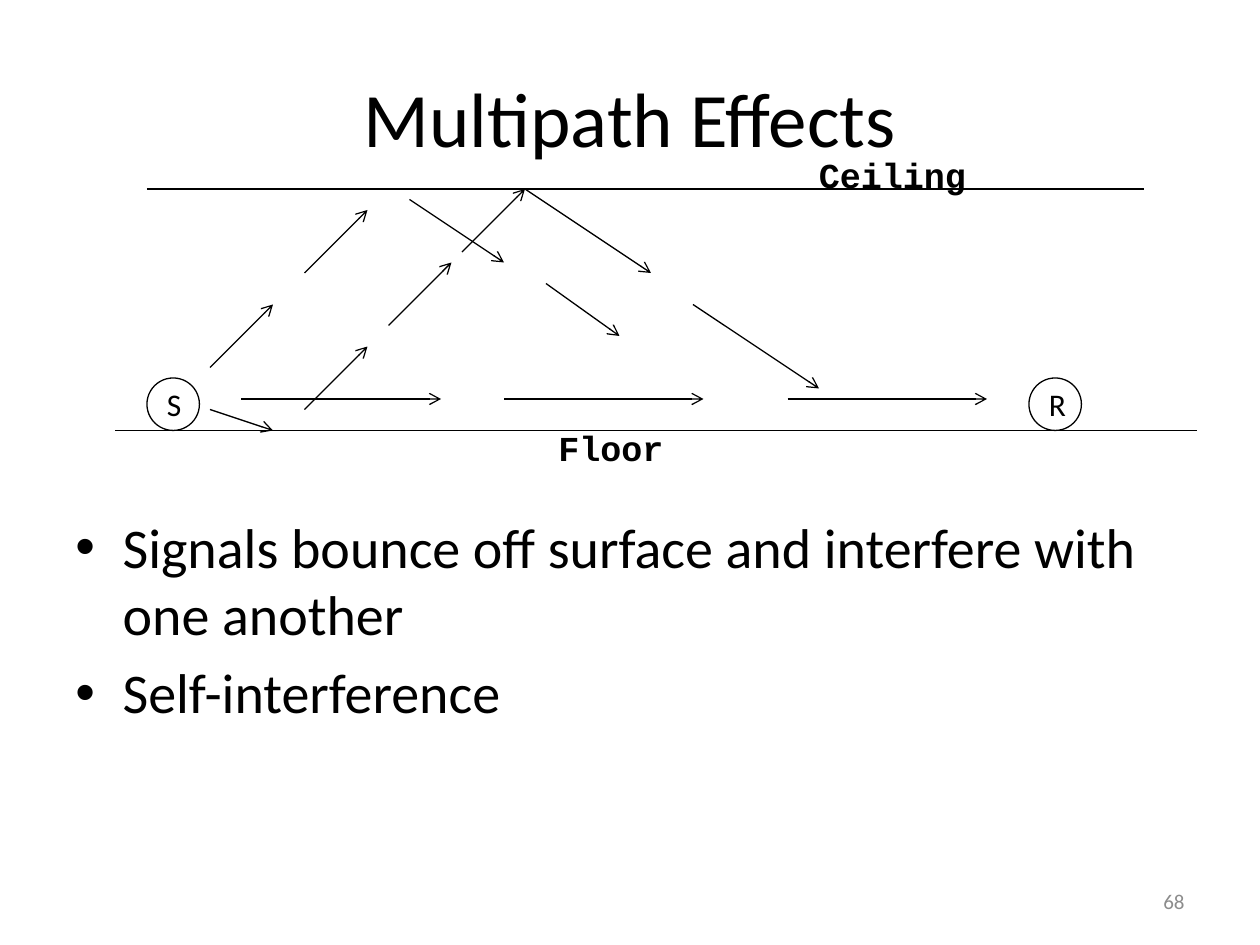
"""Build the slide on multipath effects: signal paths between a sender and a receiver."""
import pptx
import pptx.dml.color
import pptx.enum.shapes
import pptx.enum.text
import pptx.oxml.ns
import pptx.util
from lxml import etree

ALIGN = pptx.enum.text.PP_ALIGN
ANCHOR = pptx.enum.text.MSO_ANCHOR
THEME = {
    "ink": pptx.dml.color.RGBColor(0x00, 0x00, 0x00),
    "muted": pptx.dml.color.RGBColor(0x8C, 0x8C, 0x8C),
    "font": "Calibri",
    "label_font": "Courier New",
    "title": 44,
    "body": 32,
    "label": 20,
    "station": 18,
    "number": 12,
    "line": 0.75,
}

TITLE = "Multipath Effects"
POINTS = ["Signals bounce off surface and interfere with one another", "Self-interference"]
PAGE_NUMBER = "68"
STATIONS = [("S", 140), ("R", 980)]
SURFACE_LABELS = [("Ceiling", (768, 140, 166, 53)), ("Floor", (520, 400, 125, 53))]

CEILING_Y, FLOOR_Y, DIRECT_Y = 180, 410, 380
STATION_SIZE, DIRECT_LENGTH, INDENT = 50, 190, 45
SURFACES = [(110, FLOOR_Y, 1140, FLOOR_Y), (140, CEILING_Y, 1090, CEILING_Y)]
DIRECT_STARTS = [230, 480, 750]
CEILING_PATH = [(200, 350, 260, 290), (290, 260, 350, 200), (390, 190, 480, 250), (520, 270, 590, 320)]
FLOOR_PATH = [
    (200, 390, 260, FLOOR_Y), (290, 390, 350, 330), (370, 310, 430, 250),
    (440, 240, 500, CEILING_Y), (500, CEILING_Y, 620, 260), (660, 290, 780, 370),
]


def px(length):
    return pptx.util.Emu(length * 7620)


def add_child(parent, tag, **attributes):
    return etree.SubElement(parent, pptx.oxml.ns.qn(tag), attributes)


def write(shape, lines, size, font="font", color="ink", bold=False,
          align=ALIGN.LEFT, anchor=ANCHOR.TOP, wrap=True):
    frame = shape.text_frame
    frame.text = "\n".join(lines)
    frame.word_wrap = wrap
    frame.vertical_anchor = anchor
    for paragraph in frame.paragraphs:
        paragraph.alignment = align
        for run in paragraph.runs:
            run.font.name = THEME[font]
            run.font.size = pptx.util.Pt(THEME[size])
            run.font.color.rgb = THEME[color]
            run.font.bold = bold
    return frame


def add_text(slide, box, lines, size, **style):
    return write(slide.shapes.add_textbox(*map(px, box)), lines, size, **style)


def add_bullets(slide, box, points):
    for paragraph in add_text(slide, box, points, "body").paragraphs:
        paragraph.space_before = pptx.util.Pt(THEME["body"] * 0.2)
        properties = paragraph._p.get_or_add_pPr()
        properties.set("marL", str(px(INDENT)))
        properties.set("indent", str(px(-INDENT)))
        add_child(properties, "a:buFont", typeface="Arial")
        add_child(properties, "a:buChar", char="•")


def add_line(slide, ends, arrow=False):
    line = slide.shapes.add_connector(pptx.enum.shapes.MSO_CONNECTOR.STRAIGHT, *map(px, ends))
    line.line.color.rgb = THEME["ink"]
    line.line.width = pptx.util.Pt(THEME["line"])
    if arrow:
        add_child(line.line._get_or_add_ln(), "a:tailEnd", type="arrow")
    add_child(line._element.spPr, "a:effectLst")


def add_station(slide, letter, left):
    box = (left, FLOOR_Y - STATION_SIZE, STATION_SIZE, STATION_SIZE)
    station = slide.shapes.add_shape(pptx.enum.shapes.MSO_SHAPE.OVAL, *map(px, box))
    station.shadow.inherit = False
    station.fill.background()
    station.line.color.rgb = THEME["ink"]
    station.line.width = pptx.util.Pt(THEME["line"])
    write(station, [letter], "station", anchor=ANCHOR.MIDDLE, wrap=False)


def main():
    deck = pptx.Presentation()
    deck.slide_width, deck.slide_height = px(1200), px(900)
    slide = deck.slides.add_slide(deck.slide_layouts[6])

    add_text(slide, (60, 36, 1080, 150), [TITLE], "title", align=ALIGN.CENTER, anchor=ANCHOR.MIDDLE)
    add_bullets(slide, (60, 482, 1080, 313), POINTS)
    for letter, left in STATIONS:
        add_station(slide, letter, left)
    for surface in SURFACES:
        add_line(slide, surface)
    direct_path = [(x, DIRECT_Y, x + DIRECT_LENGTH, DIRECT_Y) for x in DIRECT_STARTS]
    for hop in direct_path + CEILING_PATH + FLOOR_PATH:
        add_line(slide, hop, arrow=True)
    for label, box in SURFACE_LABELS:
        add_text(slide, box, [label], "label", font="label_font", bold=True, wrap=False)
    add_text(slide, (860, 834, 280, 48), [PAGE_NUMBER], "number", color="muted",
             align=ALIGN.RIGHT, anchor=ANCHOR.MIDDLE)
    deck.save("out.pptx")


if __name__ == "__main__":
    main()
